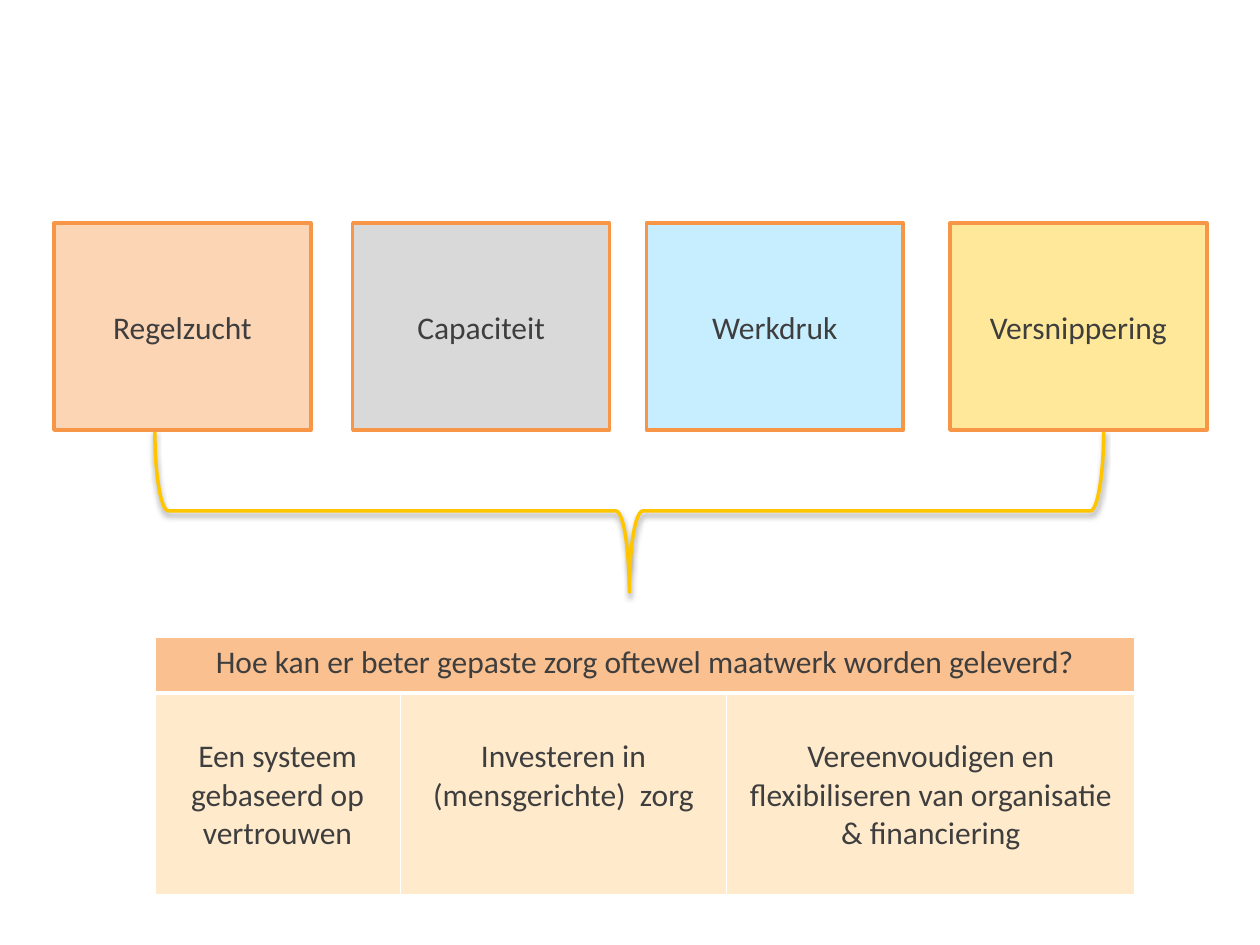
from lxml import etree
from pptx import Presentation
from pptx.dml.color import RGBColor
from pptx.enum.shapes import MSO_SHAPE
from pptx.enum.text import MSO_ANCHOR, PP_ALIGN
from pptx.oxml import parse_xml
from pptx.oxml.ns import nsdecls
from pptx.util import Cm, Pt

RECT = MSO_SHAPE.RECTANGLE
BRACE = MSO_SHAPE.RIGHT_BRACE
MIDDLE = MSO_ANCHOR.MIDDLE
TOP = MSO_ANCHOR.TOP
CENTER = PP_ALIGN.CENTER

HUES = {
    "text": "3E3E3E", "edge": "F79646", "brace": "FFC600",
    "peach": "FCD5B5", "gray": "D9D9D9", "blue": "C6EEFF", "gold": "FFE899",
    "head": "FAC090", "body": "FFEACC", "white": "FFFFFF", "shade": "000000",
}
FONT = {"name": "Calibri", "size": Pt(18), "bold": False}

# Theme boxes: label, fill, left offset in cm
THEMES = [
    ("Regelzucht", "peach", 0),
    ("Capaciteit", "gray", 6.02),
    ("Werkdruk", "blue", 11.94),
    ("Versnippering", "gold", 18.06),
]
QUERY = "Hoe kan er beter gepaste zorg oftewel maatwerk worden geleverd?"
PLANS = [
    ("Een systeem gebaseerd op vertrouwen", 4.95),
    ("Investeren in (mensgerichte)  zorg", 6.58),
    ("Vereenvoudigen en flexibiliseren van organisatie & financiering", 8.23),
]


def color(name):
    return RGBColor.from_string(HUES[name])


def paint(item, name):
    item.fill.solid()
    item.fill.fore_color.rgb = color(name)


def write(frame, text):
    para = frame.paragraphs[0]
    para.text = text
    para.alignment = CENTER
    for key, value in FONT.items():
        setattr(para.font, key, value)
    para.font.color.rgb = color("text")


def add_themes(slide, left, top, width, height):
    for label, hue, shift in THEMES:
        box = slide.shapes.add_shape(RECT, Cm(left + shift), Cm(top), Cm(width), Cm(height))
        box.shadow.inherit = False
        paint(box, hue)
        box.line.color.rgb = color("edge")
        box.line.width = Pt(2)
        box.text_frame.vertical_anchor = MIDDLE
        write(box.text_frame, label)


def add_brace(slide, left, top, width, height):
    # The brace is turned a quarter, so its sides swap around the same centre
    shift = (width - height) / 2
    brace = slide.shapes.add_shape(
        BRACE, Cm(left + shift), Cm(top - shift), Cm(height), Cm(width))
    brace.rotation = 90
    brace.fill.background()
    brace.line.color.rgb = color("brace")
    brace.line.width = Pt(2)
    brace.shadow.inherit = False
    effects = brace.element.spPr.find("{*}effectLst")
    effects.append(parse_xml(
        f'<a:outerShdw {nsdecls("a")} blurRad="{Pt(3.1)}" dist="{Pt(1.6)}" '
        f'dir="5400000" rotWithShape="0"><a:srgbClr val="{HUES["shade"]}">'
        '<a:alpha val="38000"/></a:srgbClr></a:outerShdw>'))


def set_edges(cell, **widths):
    props = cell._tc.get_or_add_tcPr()
    for spot, side in enumerate("LRTB"):
        edge = parse_xml(f'<a:ln{side} {nsdecls("a")} w="{Pt(widths.get(side, 1))}"/>')
        fill = etree.SubElement(edge, edge.tag.replace("ln" + side, "solidFill"))
        etree.SubElement(fill, fill.tag.replace("solidFill", "srgbClr"), val=HUES["white"])
        props.insert(spot, edge)


def add_plans(slide, left, top, width, height):
    head = 1.12
    table = slide.shapes.add_table(
        2, len(PLANS), Cm(left), Cm(top), Cm(width), Cm(height)).table
    table.rows[0].height = Cm(head)
    table.rows[1].height = Cm(height - head)

    # Answers, one per column, under the shared question
    for col, (text, size) in enumerate(PLANS):
        table.columns[col].width = Cm(size)
        top_cell, cell = table.cell(0, col), table.cell(1, col)
        paint(top_cell, "head")
        set_edges(top_cell, B=3)
        paint(cell, "body")
        set_edges(cell, T=3)
        cell.vertical_anchor = TOP
        cell.margin_top = Cm(0.9)
        write(cell.text_frame, text)

    first = table.cell(0, 0)
    first.merge(table.cell(0, len(PLANS) - 1))
    write(first.text_frame, QUERY)


def main():
    deck = Presentation()
    deck.slide_width, deck.slide_height = Cm(25.4), Cm(19.05)
    slide = deck.slides.add_slide(deck.slide_layouts[6])
    add_brace(slide, 3.12, 8.66, 19.13, 3.28)
    add_themes(slide, 1.09, 4.5, 5.18, 4.17)
    add_plans(slide, 3.12, 12.85, 19.76, 5.18)
    deck.save("out.pptx")


if __name__ == "__main__":
    main()
